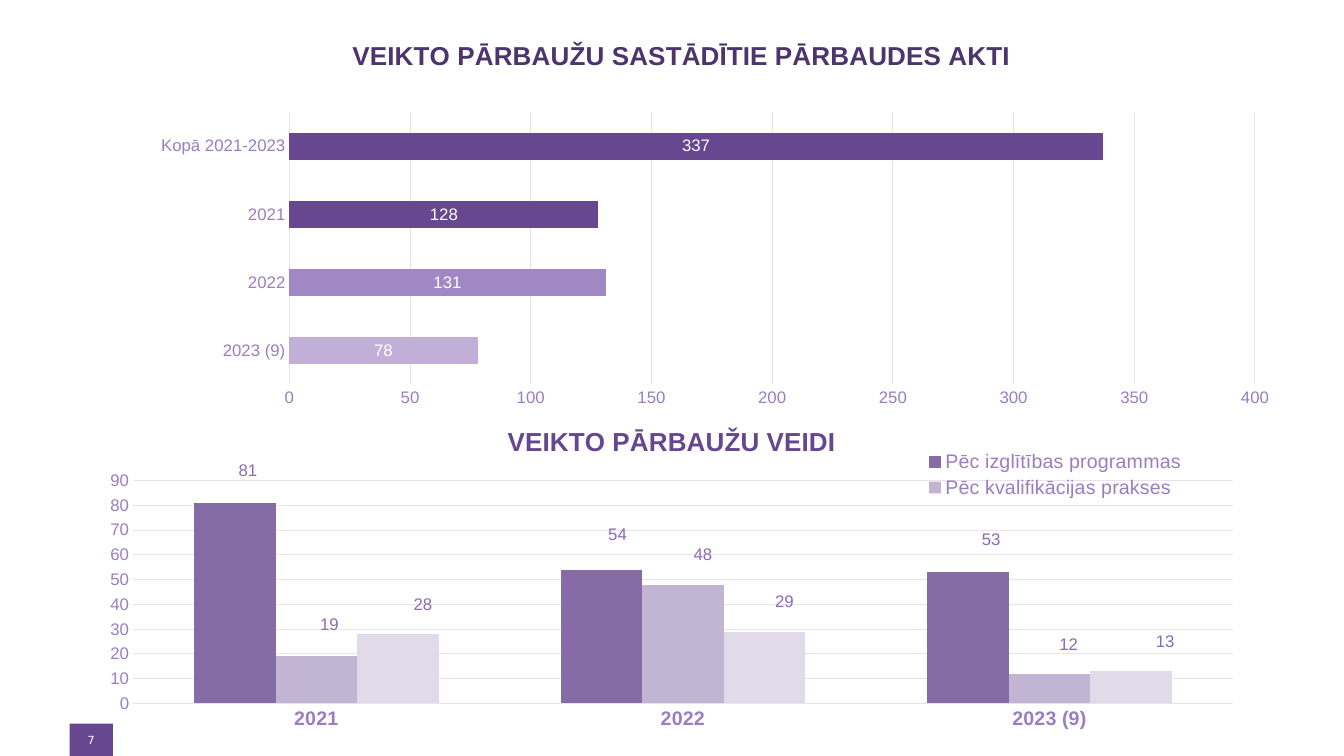
import pptx
import pptx.util
import pptx.chart.data
import pptx.dml.color
import pptx.enum.chart
import pptx.enum.shapes
import pptx.enum.text
import pptx.oxml
import pptx.oxml.ns
from dataclasses import dataclass

CELL = 0.1  # side of a grid cell in inches; all places below are in cells
XL = pptx.enum.chart


@dataclass
class Theme:
    font: str = "Arial"
    number_font: str = "DejaVu Sans"
    white: str = "FFFFFF"
    purple: str = "664790"
    title_dark: str = "4C346C"
    title_light: str = "664690"
    axis: str = "9A7EC0"
    label: str = "8B6AB6"
    grid: str = "E8E1F0"
    lilac: str = "A287C5"
    pale: str = "C1AFD8"
    series: tuple = ("856CA6", "C2B5D3", "E0DAE9")
    title_size: float = 18.6
    text_size: int = 12
    large_size: int = 14
    number_size: int = 8


def rgb(value):
    return pptx.dml.color.RGBColor.from_string(value)


def element(tag, content):
    ns = pptx.oxml.ns.nsdecls("c")
    return pptx.oxml.parse_xml(f"<c:{tag} {ns}>{content}</c:{tag}>")


class Deck:
    def __init__(self, theme):
        self.theme = theme
        self.prs = pptx.Presentation()
        self.prs.slide_width = self.cells(133.33)
        self.prs.slide_height = self.cells(75)
        self.s = self.prs.slides.add_slide(self.prs.slide_layouts[6])

    def cells(self, n):
        return pptx.util.Inches(n * CELL)

    def style(self, font, size, color, bold=False, name=None):
        font.name = name or self.theme.font
        font.size = pptx.util.Pt(size)
        font.bold = bold
        font.color.rgb = rgb(color)

    def fill(self, target, color):
        target.format.fill.solid()
        target.format.fill.fore_color.rgb = rgb(color)

    def page_number(self, text, at):
        sp = self.s.shapes.add_shape(pptx.enum.shapes.MSO_SHAPE.RECTANGLE,
                                     *map(self.cells, at))
        sp.shadow.inherit = False
        sp.fill.solid()
        sp.fill.fore_color.rgb = rgb(self.theme.purple)
        sp.line.fill.background()
        tf = sp.text_frame
        tf.margin_left = tf.margin_right = tf.margin_top = tf.margin_bottom = self.cells(0.4)
        tf.vertical_anchor = pptx.enum.text.MSO_ANCHOR.MIDDLE
        p = tf.paragraphs[0]
        p.alignment = pptx.enum.text.PP_ALIGN.CENTER
        r = p.add_run()
        r.text = text
        self.style(r.font, self.theme.number_size, self.theme.white,
                   name=self.theme.number_font)

    def place(self, parent, after, frame, at, inner=False):
        """Pin a chart part to a place on the slide grid."""
        left, top, width, height = frame
        shares = [(at[0] - left) / width, (at[1] - top) / height]
        shares += [n / total for n, total in zip(at[2:], (width, height))]
        self.layout(parent, after, shares, inner, "edge")

    def layout(self, parent, after, shares, inner=False, mode=None):
        for old in parent.findall(pptx.oxml.ns.qn("c:layout")):
            parent.remove(old)
        parts = '<c:layoutTarget val="inner"/>' if inner else ""
        if mode:
            parts += f'<c:xMode val="{mode}"/><c:yMode val="{mode}"/>'
        parts += "".join(f'<c:{k} val="{v:.4f}"/>' for k, v in zip("xywh", shares))
        node = element("layout", f"<c:manualLayout>{parts}</c:manualLayout>")
        if after is None:
            parent.insert(0, node)
        else:
            parent.find(pptx.oxml.ns.qn(after)).addnext(node)

    def chart(self, kind, at, cats, series, title, title_color, title_at, plot_at,
              top, step, cat_size, cat_bold=False, overlap=0):
        t = self.theme
        data = pptx.chart.data.CategoryChartData()
        data.categories = cats
        for name, values in series:
            data.add_series(name, values)
        chart = self.s.shapes.add_chart(kind, *map(self.cells, at), data).chart
        self.style(chart.font, 10, t.title_light)
        chart.has_legend = False
        # Title
        chart.has_title = True
        r = chart.chart_title.text_frame.paragraphs[0].add_run()
        r.text = title
        self.style(r.font, t.title_size, title_color, True)
        self.place(chart.chart_title._element, "c:tx", at, title_at)
        # Axes
        for axis in (chart.category_axis, chart.value_axis):
            axis.major_tick_mark = axis.minor_tick_mark = XL.XL_TICK_MARK.NONE
            axis.format.line.fill.background()
            self.style(axis.tick_labels.font, t.text_size, t.axis)
        self.style(chart.category_axis.tick_labels.font, cat_size, t.axis, cat_bold)
        va = chart.value_axis
        va.minimum_scale, va.maximum_scale, va.major_unit = 0, top, step
        va.has_major_gridlines = True
        va.major_gridlines.format.line.color.rgb = rgb(t.grid)
        va.major_gridlines.format.line.width = pptx.util.Pt(0.75)
        # Plot
        plot = chart.plots[0]
        plot.gap_width, plot.overlap = 150, overlap
        plot.vary_by_categories = False
        self.place(chart._chartSpace.chart.plotArea, None, at, plot_at, inner=True)
        return chart

    def labels(self, ser, color, position):
        labels = ser.data_labels
        labels.show_value = True
        labels.position = position
        self.style(labels.font, self.theme.text_size, color)
        for leader in ser._element.xpath("c:dLbls/c:showLeaderLines"):
            leader.set("val", "0")

    def move_labels(self, ser, frame, offsets):
        for i, (dx, dy) in enumerate(offsets):
            label = ser.points[i].data_label
            self.style(label.font, self.theme.text_size, self.theme.label)
            label.position = XL.XL_LABEL_POSITION.OUTSIDE_END
            node = ser._element.xpath(f"c:dLbls/c:dLbl[c:idx/@val='{i}']")[0]
            self.layout(node, "c:idx", (dx / frame[2], dy / frame[3]))

    def legend(self, chart, frame, at, hidden):
        chart.has_legend = True
        legend = chart.legend
        legend.position = XL.XL_LEGEND_POSITION.BOTTOM
        legend.include_in_layout = False
        self.style(legend.font, self.theme.large_size, self.theme.axis)
        node = legend._element
        self.place(node, "c:legendPos", frame, at)
        node.find(pptx.oxml.ns.qn("c:legendPos")).addnext(element(
            "legendEntry", f'<c:idx val="{hidden}"/><c:delete val="1"/>'))


def main():
    t = Theme()
    deck = Deck(t)

    # Page number
    deck.page_number("7", (6.9, 71.8, 4.3, 3.2))

    # Inspection reports by year
    reports = deck.chart(
        XL.XL_CHART_TYPE.BAR_STACKED, (6.9, 2.5, 121.4, 37.8),
        ["2023 (9)", "2022", "2021", "Kopā 2021-2023"],
        [("", (78, 131, 128, 337))],
        "VEIKTO PĀRBAUŽU SASTĀDĪTIE PĀRBAUDES AKTI", t.title_dark, (34.5, 3.3),
        (28.7, 11.2, 95.8, 27.2), 400, 50, t.text_size, overlap=100)
    ser = reports.plots[0].series[0]
    deck.fill(ser, t.purple)
    for i, color in enumerate((t.pale, t.lilac)):
        deck.fill(ser.points[i], color)
    deck.labels(ser, t.white, XL.XL_LABEL_POSITION.CENTER)

    # Kinds of inspection by year
    frame = (8.7, 40.3, 116, 36.5)
    kinds = deck.chart(
        XL.XL_CHART_TYPE.COLUMN_CLUSTERED, frame, ["2021", "2022", "2023 (9)"],
        [("Pēc izglītības programmas", (81, 54, 53)),
         ("Pēc kvalifikācijas prakses", (19, 48, 12)),
         ("", (28, 29, 13))],
        "VEIKTO PĀRBAUŽU VEIDI", t.title_light, (49.9, 41.6),
        (13.2, 47.7, 109.1, 22.1), 90, 10, t.large_size, cat_bold=True)
    offsets = [((1.3, -1.9), (1.6, -2.2), (2.3, -2)),
               ((1.3, -1.9), (2, -1.7), (1.9, -1.6)),
               ((2.5, -1.6), (2, -1.7), (3.4, -1.7))]
    for ser, color, moves in zip(kinds.plots[0].series, t.series, offsets):
        deck.fill(ser, color)
        deck.labels(ser, t.label, XL.XL_LABEL_POSITION.OUTSIDE_END)
        deck.move_labels(ser, frame, moves)
    deck.legend(kinds, frame, (90.7, 44.4, 28, 5.4), hidden=2)

    deck.prs.save("out.pptx")


if __name__ == "__main__":
    main()
